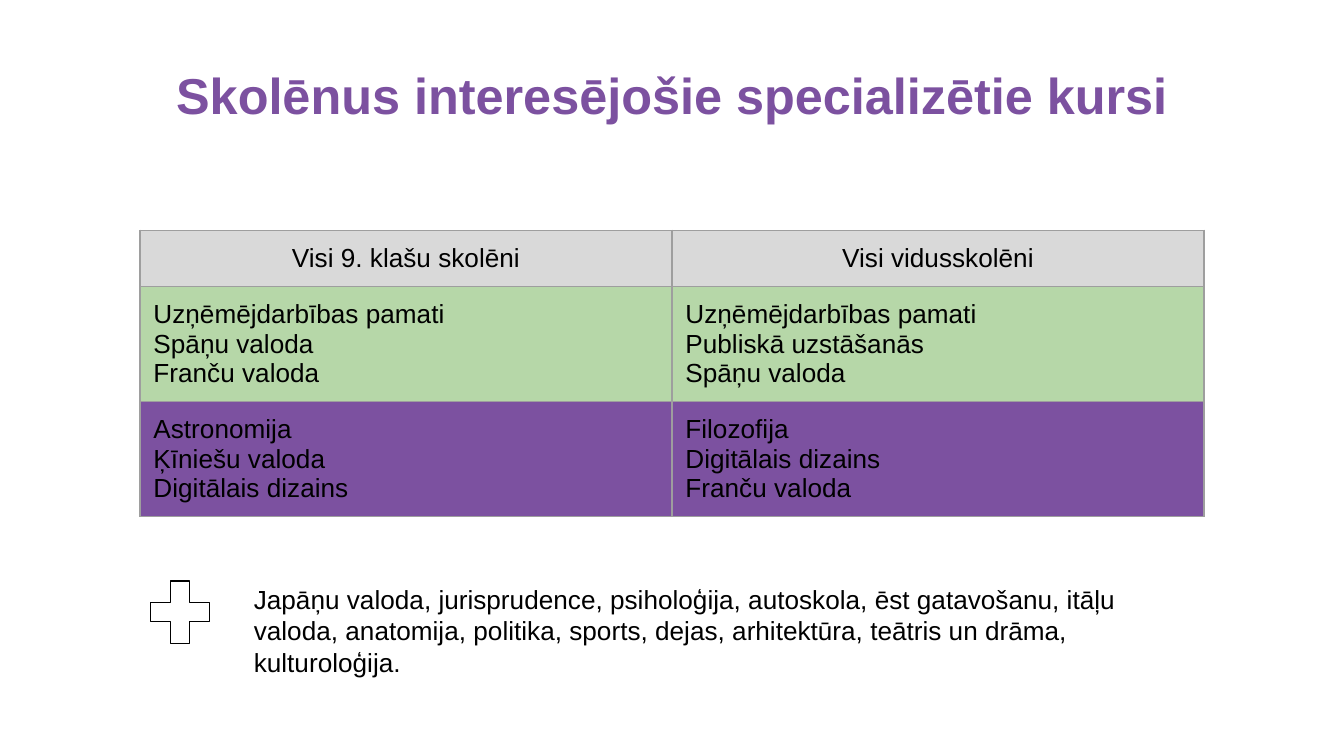
"""Build the slide on the specialised courses that interest pupils."""
import lxml.etree
import pptx
import pptx.dml.color
import pptx.enum.shapes
import pptx.enum.text
import pptx.oxml.ns
import pptx.util

Pt = pptx.util.Pt
ALIGN = pptx.enum.text.PP_ALIGN
ANCHOR = pptx.enum.text.MSO_ANCHOR

COLOURS = {
    "text": "000000",
    "accent": "7C51A0",
    "header": "D9D9D9",
    "favourite": "B6D7A8",
    "border": "9E9E9E",
    "plus": "FFFFFF",
}
BODY_FONT = {"name": "Arial", "size": Pt(14), "bold": False}
TITLE_FONT = {"name": "Arial", "size": Pt(27), "bold": True}
CELL_MARGINS = {
    f"margin_{side}": Pt(7.2) for side in ("left", "top", "right", "bottom")
}
TITLE_MARGINS = {
    "margin_left": Pt(5), "margin_top": Pt(2.7),
    "margin_right": Pt(5), "margin_bottom": Pt(2.7),
}
COURSES = [
    ("header", ALIGN.CENTER, ["Visi 9. klašu skolēni", "Visi vidusskolēni"]),
    ("favourite", ALIGN.LEFT, [
        "Uzņēmējdarbības pamati\nSpāņu valoda\nFranču valoda",
        "Uzņēmējdarbības pamati\nPubliskā uzstāšanās\nSpāņu valoda",
    ]),
    ("accent", ALIGN.LEFT, [
        "Astronomija\nĶīniešu valoda\nDigitālais dizains",
        "Filozofija\nDigitālais dizains\nFranču valoda",
    ]),
]
OTHER_COURSES = (
    "Japāņu valoda, jurisprudence, psiholoģija, autoskola, ēst gatavošanu, "
    "itāļu valoda, anatomija, politika, sports, dejas, arhitektūra, teātris "
    "un drāma, kulturoloģija."
)


def rgb(role):
    return pptx.dml.color.RGBColor.from_string(COLOURS[role])


def apply_format(target, values):
    for attribute, value in values.items():
        setattr(target, attribute, value)


def write_text(frame, text, font, role="text", align=ALIGN.LEFT):
    frame.text = text
    for paragraph in frame.paragraphs:
        paragraph.alignment = align
        for run in paragraph.runs:
            apply_format(run.font, font)
            run.font.color.rgb = rgb(role)


def add_title(slide, text):
    title = slide.shapes.title
    apply_format(title, {"left": Pt(24.5), "top": Pt(35.3),
                         "width": Pt(671), "height": Pt(45.4)})
    apply_format(title.text_frame, {
        **TITLE_MARGINS, "word_wrap": True, "vertical_anchor": ANCHOR.TOP,
        "auto_size": pptx.enum.text.MSO_AUTO_SIZE.NONE})
    write_text(title.text_frame, text, TITLE_FONT, "accent", ALIGN.CENTER)
    title.text_frame.paragraphs[0].line_spacing = 0.9


def add_borders(cell):
    qn = pptx.oxml.ns.qn
    properties = cell._tc.get_or_add_tcPr()
    for side in "LRTB":
        border = lxml.etree.SubElement(
            properties, qn(f"a:ln{side}"), w=str(Pt(0.75)))
        fill = lxml.etree.SubElement(border, qn("a:solidFill"))
        lxml.etree.SubElement(fill, qn("a:srgbClr"), val=COLOURS["border"])


def add_course_table(slide, left, top, column_width, row_height):
    columns = len(COURSES[0][2])
    table = slide.shapes.add_table(
        len(COURSES), columns, left, top,
        column_width * columns, row_height * len(COURSES)).table
    apply_format(table, {"first_row": False, "horz_banding": False})
    for column in table.columns:
        column.width = column_width
    for row, (role, align, texts) in enumerate(COURSES):
        table.rows[row].height = row_height
        for column, text in enumerate(texts):
            cell = table.cell(row, column)
            apply_format(cell, CELL_MARGINS)
            add_borders(cell)
            cell.fill.solid()
            cell.fill.fore_color.rgb = rgb(role)
            write_text(cell.text_frame, text, BODY_FONT, align=align)


def add_plus(slide, left, top, width, height):
    plus = slide.shapes.add_shape(
        pptx.enum.shapes.MSO_SHAPE.MATH_PLUS, left, top, width, height)
    plus.adjustments[0] = 0.235
    plus.shadow.inherit = False
    plus.fill.solid()
    plus.fill.fore_color.rgb = rgb("plus")
    plus.line.color.rgb = rgb("text")
    plus.line.width = Pt(0.75)


def add_note(slide, text, left, top, width, height):
    note = slide.shapes.add_textbox(left, top, width, height).text_frame
    apply_format(note, {**CELL_MARGINS, "word_wrap": True})
    write_text(note, text, BODY_FONT)


def main():
    deck = pptx.Presentation()
    apply_format(deck, {"slide_width": Pt(720), "slide_height": Pt(405)})
    slide = deck.slides.add_slide(deck.slide_layouts[5])
    add_title(slide, "Skolēnus interesējošie specializētie kursi")
    add_course_table(slide, Pt(75), Pt(123.3), Pt(285), Pt(30))
    add_plus(slide, Pt(75), Pt(305.3), Pt(43), Pt(45.4))
    add_note(slide, OTHER_COURSES, Pt(128.9), Pt(305.3), Pt(516.2), Pt(60.5))
    deck.save("out.pptx")


if __name__ == "__main__":
    main()
